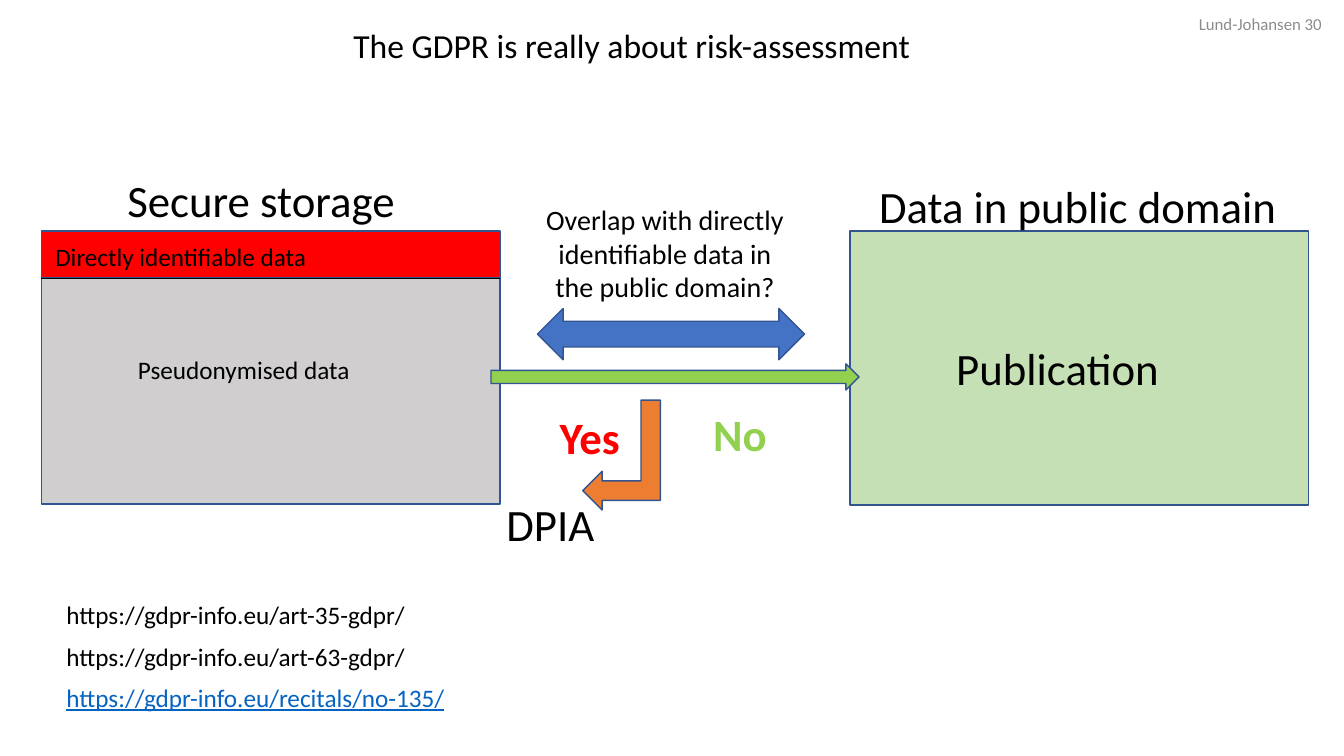
from dataclasses import dataclass

from lxml import etree
from pptx import Presentation
from pptx import util as u
from pptx.dml.color import RGBColor
from pptx.enum import shapes, text
from pptx.oxml.ns import qn

PX = 9144
KIND = shapes.MSO_SHAPE
ALIGN = text.PP_ALIGN


@dataclass(frozen=True)
class Theme:
    font: str = "Calibri"
    ink: str = "000000"
    muted: str = "8C8C8C"
    link: str = "0563C1"
    outline: str = "325491"
    blue: str = "4472C4"
    orange: str = "ED7D31"
    green: str = "92D050"
    pale_green: str = "C5E0B4"
    red: str = "FF0000"
    grey: str = "D0CECE"
    heading: int = 32
    title: int = 24
    question: int = 20
    body: int = 18
    footer: int = 12


class SlideBuilder:
    """Draws styled elements on the current slide, with lengths in px."""

    def __init__(self, deck, theme):
        self.theme = theme
        self.page = deck.slides.add_slide(deck.slide_layouts[6])

    def shape(self, kind, at, fill, rotation=0, flip=False):
        shape = self.page.shapes.add_shape(kind, *(PX * n for n in at))
        shape.shadow.inherit = False
        shape.fill.solid()
        shape.fill.fore_color.rgb = RGBColor.from_string(fill)
        shape.line.color.rgb = RGBColor.from_string(self.theme.outline)
        shape.line.width = u.Pt(1)
        shape.rotation = rotation
        if flip:
            shape._element.spPr.get_or_add_xfrm().set("flipV", "1")

    def label(self, at, words, size, color=None, align=ALIGN.CENTER,
              bold=False, underline=False, wrap=True, grow=True):
        box = self.page.shapes.add_textbox(*(PX * n for n in at))
        frame = box.text_frame
        frame.word_wrap = wrap
        if grow:
            frame.auto_size = text.MSO_AUTO_SIZE.SHAPE_TO_FIT_TEXT
        else:
            frame.vertical_anchor = text.MSO_ANCHOR.MIDDLE
        para = frame.paragraphs[0]
        para.alignment = align
        span = para.add_run()
        span.text = words
        span.font.name = self.theme.font
        span.font.size = u.Pt(size)
        span.font.bold = bold
        span.font.underline = underline
        span.font.color.rgb = RGBColor.from_string(color or self.theme.ink)

    def line(self, start, end, width):
        line = self.page.shapes.add_connector(
            shapes.MSO_CONNECTOR.STRAIGHT, *(PX * n for n in start + end))
        line.line.color.rgb = RGBColor.from_string(self.theme.ink)
        line.line.width = u.Pt(width)
        etree.SubElement(line._element.spPr, qn("a:effectLst"))


def main():
    deck = Presentation()
    deck.slide_width, deck.slide_height = 1333 * PX, 750 * PX
    theme = Theme()
    slide = SlideBuilder(deck, theme)

    slide.shape(KIND.RECTANGLE, (41, 275, 455, 225), theme.grey)
    slide.shape(KIND.RECTANGLE, (41, 229, 455, 47), theme.red)
    slide.label((40, 166, 438, 64), "Secure storage", theme.heading)
    slide.label((45, 234, 313, 40), "Directly identifiable data", theme.body,
                align=ALIGN.LEFT)
    slide.label((127, 347, 282, 40), "Pseudonymised data", theme.body,
                align=ALIGN.LEFT)

    slide.shape(KIND.RECTANGLE, (843, 229, 455, 272), theme.pale_green)
    slide.label((813, 172, 512, 64), "Data in public domain", theme.heading)

    slide.shape(KIND.LEFT_RIGHT_ARROW, (533, 306, 265, 51), theme.blue)
    slide.label((527, 196, 265, 111),
                "Overlap with directly identifiable data in the public domain?",
                theme.question)
    slide.label((676, 399, 116, 64), "No", theme.heading, theme.green, bold=True)
    slide.label((172, 20, 909, 50), "The GDPR is really about risk-assessment",
                theme.title)

    for row, article in enumerate(("art-35-gdpr", "art-63-gdpr", "recitals/no-135")):
        linked = article.startswith("recitals")
        slide.label((56, 590 + 41 * row, 401 if linked else 362, 40),
                    f"https://gdpr-info.eu/{article}/", theme.body,
                    theme.link if linked else theme.ink,
                    align=ALIGN.LEFT, underline=linked, wrap=False)

    slide.label((1160, 4, 161, 40), "Lund-Johansen 30", theme.footer, theme.muted,
                align=ALIGN.RIGHT, grow=False)
    slide.label((488, 488, 116, 64), "DPIA", theme.heading)
    slide.shape(KIND.BENT_UP_ARROW, (562, 413, 109, 77), theme.orange,
                rotation=90, flip=True)
    slide.line((41, 276), (496, 276), 0.5)
    slide.label((527, 402, 116, 64), "Yes", theme.heading, theme.red, bold=True)
    slide.shape(KIND.RIGHT_ARROW, (487, 361, 365, 26), theme.green)
    slide.label((909, 333, 280, 64), "Publication", theme.heading)

    deck.save("out.pptx")


if __name__ == "__main__":
    main()
